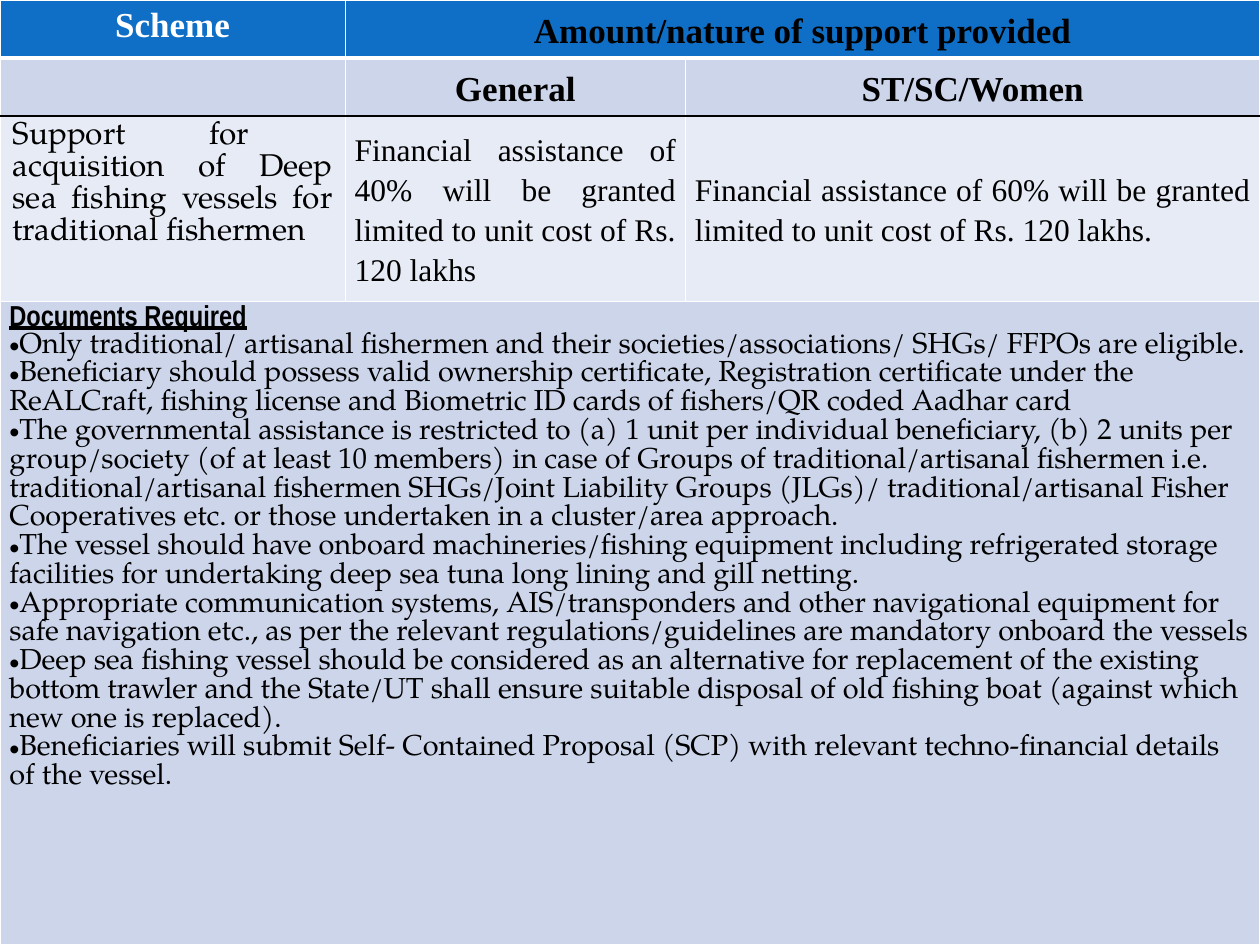
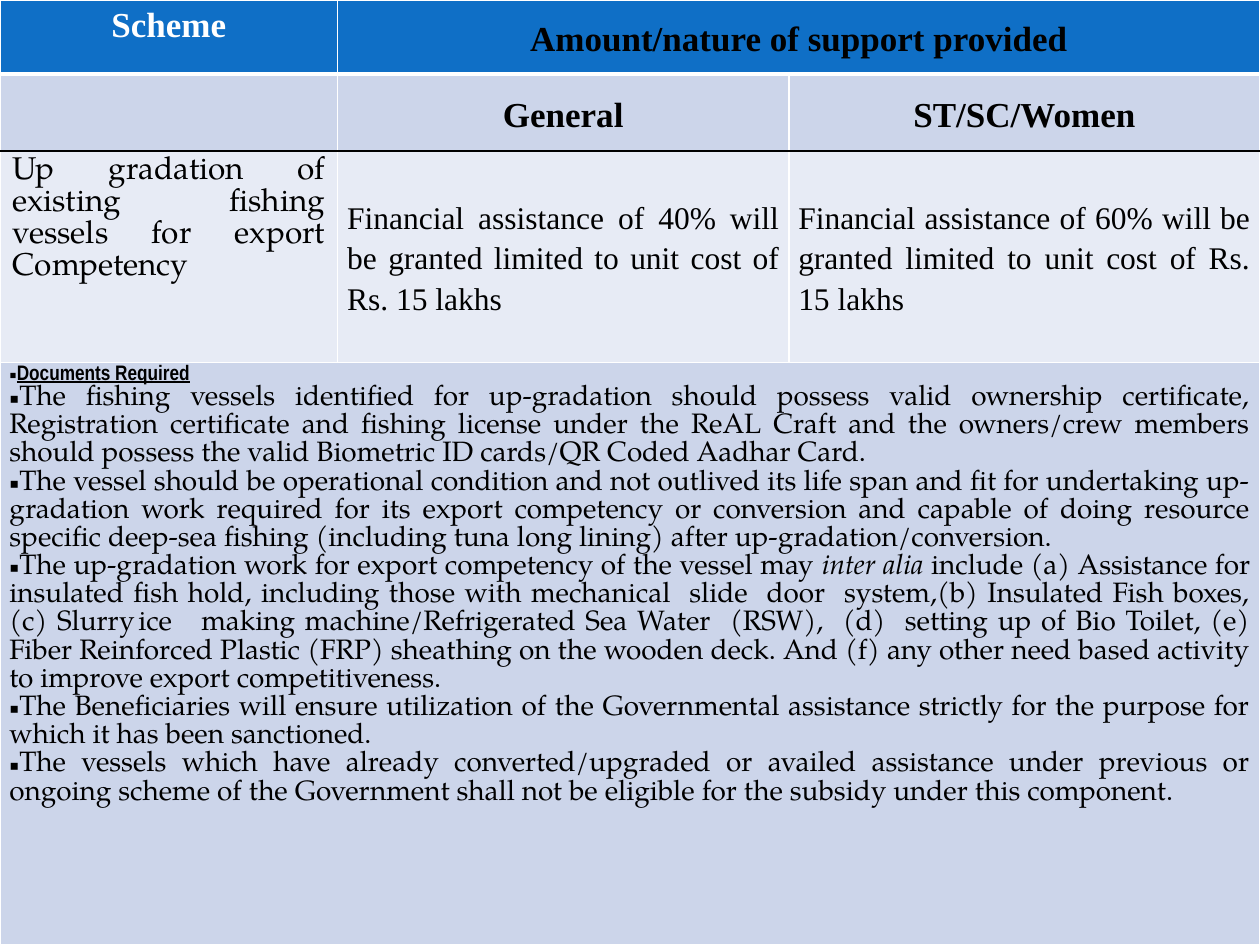
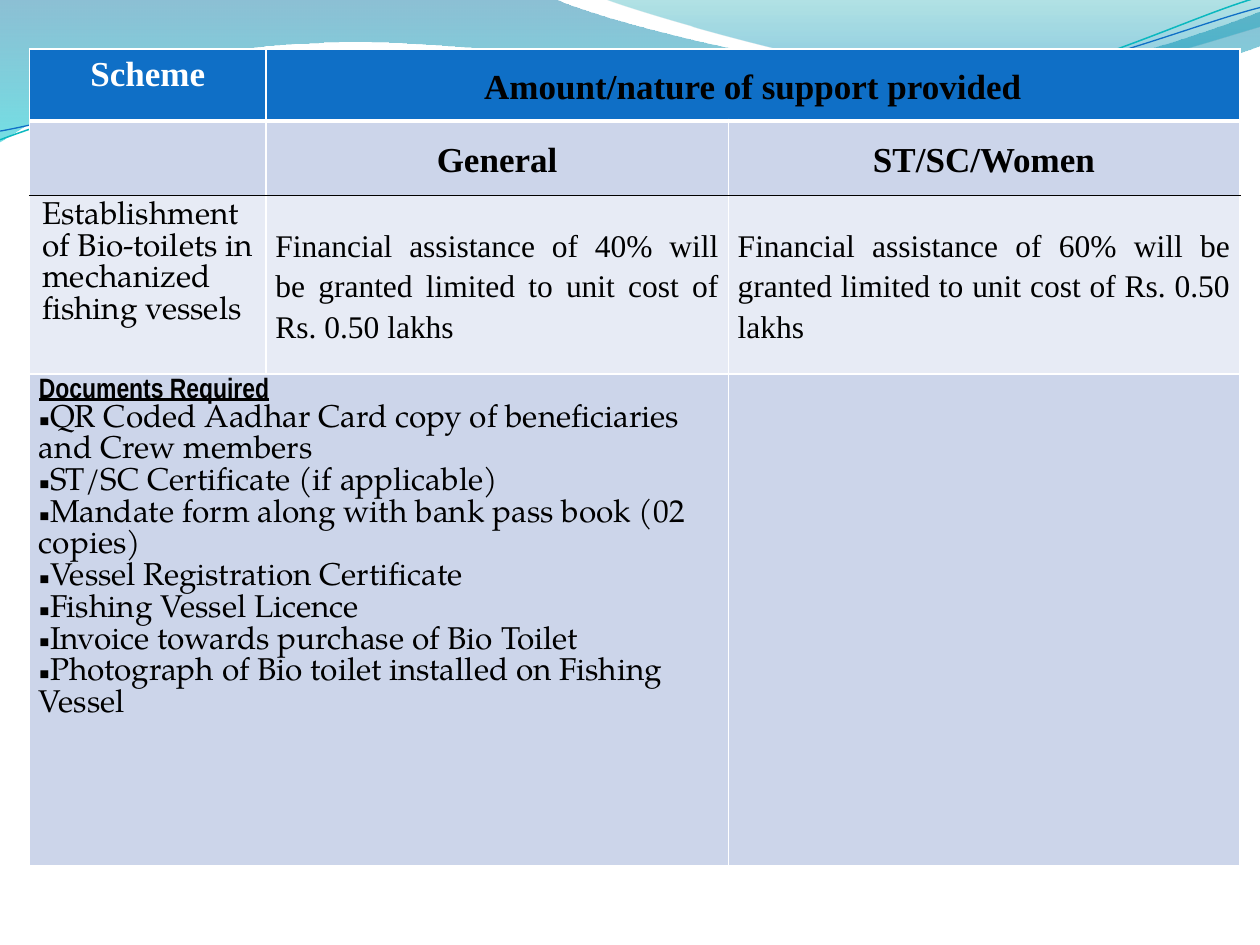
from lxml import etree
from pptx import Presentation
from pptx.dml.color import RGBColor
from pptx.enum import text
from pptx.oxml import ns
from pptx.util import Pt

WHITE = RGBColor(0xFF, 0xFF, 0xFF)
BLACK = RGBColor(0x00, 0x00, 0x00)
BLUE = RGBColor(0x0F, 0x6F, 0xC6)
TEAL = RGBColor(0x0A, 0xB8, 0xBF)
BAND_DARK = RGBColor(0xCC, 0xD5, 0xEA)
BAND_LIGHT = RGBColor(0xE7, 0xEB, 0xF5)
DEEP_BLUE = RGBColor(0x00, 0x74, 0xA1)
AQUA = RGBColor(0x00, 0xC6, 0xCF)
SEA_GREEN = RGBColor(0x00, 0xA1, 0xA9)
SKY_BLUE = RGBColor(0x00, 0x8B, 0xBF)
SERIF = "Times New Roman"
PALATINO = "TeX Gyre Pagella"
NARROW = "Arial Narrow"
CENTER, JUSTIFY, LEFT = text.PP_ALIGN.CENTER, text.PP_ALIGN.JUSTIFY, text.PP_ALIGN.LEFT

WAVES = [
    {"start": (0, 0), "stops": [(0, DEEP_BLUE, 45), (1, AQUA, 55)], "segments": [
        [(316.8, -0.7)],
        [(342.7, 12.2), (478.1, 45.4), (545.8, 45.4)],
        [(614.2, 45.4), (689.8, 18.7), (720, 6.5)],
        [(720.7, 25.9)],
        [(707.8, 31.7), (626.4, 54.7), (537.1, 54)],
        [(447.8, 54), (275, 20.2), (185, 24.5)],
        [(92.9, 25.9), (33.1, 59.8), (-0.7, 81.4)],
    ]},
    {"start": (344.9, -0.7), "stops": [(0, SEA_GREEN, 30), (0.8, SKY_BLUE, 45)], "segments": [
        [(366.5, 7.9), (491, 44.6), (553.7, 46.8)],
        [(616.3, 49.7), (691.9, 23), (720, 15.1)],
        [(720, 0)],
    ]},
    {"start": (0, 79.9), "line": (TEAL, 0.85), "segments": [
        [(34.6, 67), (113.8, 41), (199.4, 37.4)],
        [(284.4, 33.8), (427, 64.1), (513.4, 57.6)],
        [(599.8, 51.1), (675.4, 10.8), (718.6, -1.4)],
    ]},
    {"start": (0, 74.9), "line": (BLUE, 0.75), "segments": [
        [(33.8, 69.1), (118.1, 43.9), (203.8, 40.3)],
        [(290.2, 36.7), (429.8, 60.5), (516.2, 54)],
        [(601.9, 48.2), (677.5, 15.1), (720, 4.3)],
    ]},
]

SCHEMES = [
    {
        "at": (0, 0), "columns": [197.3, 194.4, 328.3], "rows": [33.1, 33.1, 106, 367.8],
        "scheme": "Support for  acquisition of Deep sea fishing vessels for traditional fishermen",
        "support": [
            "Financial assistance of 40% will be granted limited to unit cost of Rs. 120 lakhs ",
            "Financial assistance of 60% will be granted limited to unit cost of Rs. 120 lakhs.",
        ],
        "span": 3, "heading_size": 16.5, "heading_bullet": None,
        "size": 16.5, "bullet": "•", "align": LEFT,
        "documents": [
            "Only traditional/ artisanal fishermen and their societies/associations/ SHGs/ FFPOs are eligible.",
            "Beneficiary should possess valid ownership certificate, Registration certificate under the "
            "ReALCraft, fishing license and Biometric ID cards of fishers/QR coded Aadhar card",
            "The governmental assistance is restricted to (a) 1 unit per individual beneficiary, (b) 2 units per "
            "group/society (of at least 10 members) in case of Groups of traditional/artisanal fishermen i.e. "
            "traditional/artisanal fishermen SHGs/Joint Liability Groups (JLGs)/ traditional/artisanal Fisher "
            "Cooperatives etc. or those undertaken in a cluster/area approach.",
            "The vessel should have onboard machineries/fishing equipment including refrigerated storage "
            "facilities for undertaking deep sea tuna long lining and gill netting.",
            "Appropriate communication systems, AIS/transponders and other navigational equipment for "
            "safe navigation etc., as per the relevant regulations/guidelines are mandatory onboard the vessels",
            "Deep sea fishing vessel should be considered as an alternative for replacement of the existing "
            "bottom trawler and the State/UT shall ensure suitable disposal of old fishing boat (against which "
            "new one is replaced).",
            "Beneficiaries will submit Self- Contained Proposal (SCP) with relevant techno-financial details "
            "of the vessel.",
        ],
    },
    {
        "at": (0, 0), "columns": [193, 257.8, 269.2], "rows": [42.4, 43.8, 121, 332.8],
        "scheme": "Up gradation of existing fishing vessels for export Competency",
        "support": [
            "Financial assistance of 40% will be granted limited to unit cost of Rs. 15 lakhs ",
            "Financial assistance of 60% will be granted limited to unit cost of Rs. 15 lakhs",
        ],
        "span": 3, "heading_size": 12, "heading_bullet": "▪",
        "size": 16, "bullet": "▪", "align": JUSTIFY,
        "documents": [
            "The fishing vessels identified for up-gradation should possess valid ownership certificate, "
            "Registration certificate and fishing license under the ReAL Craft and the owners/crew members "
            "should possess the valid Biometric ID cards/QR Coded Aadhar Card.",
            "The vessel should be operational condition and not outlived its life span and fit for undertaking "
            "up-gradation work required for its export competency or conversion and capable of doing resource "
            "specific deep-sea fishing (including tuna long lining) after up-gradation/conversion.",
            "The up-gradation work for export competency of the vessel may _inter alia _include (a) Assistance for "
            "insulated fish hold, including those with mechanical  slide  door  system,(b) Insulated Fish boxes, "
            "(c) Slurry\tice\tmaking machine/Refrigerated Sea Water  (RSW),  (d)  setting up of Bio Toilet, "
            "(e) Fiber Reinforced Plastic (FRP) sheathing on the wooden deck. And (f) any other need based "
            "activity to improve export competitiveness.",
            "The Beneficiaries will ensure utilization of the Governmental assistance strictly for the purpose for "
            "which it has been sanctioned.",
            "The vessels which have already converted/upgraded or availed assistance under previous or "
            "ongoing scheme of the Government shall not be eligible for the subsidy under this component.",
        ],
    },
    {
        "at": (16.9, 28.1), "columns": [135.1, 264.2, 292.3], "rows": [41, 42.5, 102.2, 280.8],
        "scheme": "Establishment of Bio-toilets in mechanized fishing vessels",
        "support": [
            "Financial assistance of 40% will be granted limited to unit cost of Rs. 0.50 lakhs ",
            "Financial assistance of 60% will be granted limited to unit cost of Rs. 0.50 lakhs ",
        ],
        "span": 2, "heading_size": 16, "heading_bullet": None,
        "size": 18, "bullet": "▪", "align": LEFT,
        "documents": [
            "QR Coded Aadhar Card copy of beneficiaries and Crew members",
            "ST/SC Certificate (if applicable)",
            "Mandate form along with bank pass book (02 copies)",
            "Vessel Registration Certificate",
            "Fishing Vessel Licence",
            "Invoice towards purchase of Bio Toilet",
            "Photograph of Bio toilet installed on Fishing Vessel",
        ],
    },
]


def write(paragraph, content, font=SERIF, size=18, color=BLACK, bold=False, underline=False,
          align=JUSTIFY, spacing=None, bullet=None):
    if bullet:
        properties = paragraph._p.get_or_add_pPr()
        etree.SubElement(properties, ns.qn("a:buFont"), typeface="Arial")
        etree.SubElement(properties, ns.qn("a:buChar"), char=bullet)
    paragraph.alignment = align
    if spacing:
        paragraph.line_spacing = spacing
    for index, part in enumerate(content.split("_")):
        run = paragraph.add_run()
        run.text = part
        run.font.name = font
        run.font.size = Pt(size)
        run.font.color.rgb = color
        run.font.bold = bold
        run.font.underline = underline
        run.font.italic = index % 2 == 1


def style_cell(cell, fill, top, bottom):
    properties = cell._tc.get_or_add_tcPr()
    sides = {"lnL": (WHITE, 1), "lnR": (WHITE, 1), "lnT": top, "lnB": bottom}
    for side, (color, width) in sides.items():
        border = etree.SubElement(properties, ns.qn(f"a:{side}"), w=str(Pt(width)))
        solid = etree.SubElement(border, ns.qn("a:solidFill"))
        etree.SubElement(solid, ns.qn("a:srgbClr"), val=str(color))
    cell.fill.solid()
    cell.fill.fore_color.rgb = fill


presentation = Presentation()
presentation.slide_width = Pt(720)
presentation.slide_height = Pt(540)
blank = presentation.slide_layouts[6]
slides = [presentation.slides.add_slide(blank) for scheme in SCHEMES]

UNITS = 100
for number, wave in enumerate(WAVES, start=1):
    points = [wave["start"]] + [point for segment in wave["segments"] for point in segment]
    points = [(round(x * UNITS), round(y * UNITS)) for x, y in points]
    builder = slides[0].shapes.build_freeform(*points[0], scale=Pt(1) / UNITS)
    builder.add_line_segments(points[1:], close="stops" in wave)
    shape = builder.convert_to_shape()
    shape.shadow.inherit = False

    lines = iter(list(shape.element.iter(ns.qn("a:lnTo"))))
    for segment in wave["segments"]:
        first, *others = [next(lines) for point in segment]
        if others:
            first.tag = ns.qn("a:cubicBezTo")
            for other in others:
                first.append(other[0])
                other.getparent().remove(other)

    if "stops" in wave:
        shape.line.fill.background()
        shape.fill.gradient()
        shape.fill.gradient_angle = 270
        for stop, (position, color, opacity) in zip(shape.fill.gradient_stops, wave["stops"]):
            stop.position = position
            stop.color.rgb = color
        for tint, (position, color, opacity) in zip(shape.element.iter(ns.qn("a:srgbClr")), wave["stops"]):
            etree.SubElement(tint, ns.qn("a:alpha"), val=str(opacity * 1000))
    else:
        shape.fill.background()
        color, width = wave["line"]
        shape.line.color.rgb = color
        shape.line.width = Pt(width)
    shape.name = f"Wave {number}"
    shape.element.nvSpPr.cNvPr.set("id", str(20 + number))
    presentation.slide_master.shapes.element.append(shape.element)

THIN, THICK, RULE = (WHITE, 1), (WHITE, 3), (BLACK, 1)
ROW_STYLES = [
    (BLUE, THIN, THICK),
    (BAND_DARK, THICK, RULE),
    (BAND_LIGHT, RULE, THIN),
    (BAND_DARK, THIN, THIN),
]

for slide, scheme in zip(slides, SCHEMES):
    left, top = scheme["at"]
    columns, rows = scheme["columns"], scheme["rows"]
    frame = slide.shapes.add_table(len(rows), len(columns), Pt(left), Pt(top), Pt(sum(columns)), Pt(sum(rows)))
    table = frame.table
    table.horz_banding = False
    for column, width in zip(table.columns, columns):
        column.width = Pt(width)
    for row, height, row_style in zip(table.rows, rows, ROW_STYLES):
        row.height = Pt(height)
        for cell in row.cells:
            style_cell(cell, *row_style)
    table.cell(0, 1).merge(table.cell(0, 2))
    table.cell(3, 0).merge(table.cell(3, scheme["span"] - 1))

    write(table.cell(0, 0).text_frame.paragraphs[0], "Scheme", size=20, color=WHITE, bold=True, align=CENTER)
    write(table.cell(2, 0).text_frame.paragraphs[0], scheme["scheme"], font=PALATINO)

    heading = {"size": 20, "bold": True, "align": CENTER}
    entries = [
        (0, 1, "Amount/nature of support provided", heading),
        (1, 1, "General", heading),
        (1, 2, "ST/SC/Women", heading),
        (2, 1, scheme["support"][0], {}),
        (2, 2, scheme["support"][1], {}),
        (3, 0, "Documents Required", {
            "font": NARROW, "size": scheme["heading_size"], "bold": True, "underline": True,
            "bullet": scheme["heading_bullet"]}),
    ]
    for row_index, column_index, content, style in entries:
        cell = table.cell(row_index, column_index)
        cell.margin_left = cell.margin_right = Pt(5.4)
        cell.margin_top = cell.margin_bottom = Pt(0)
        if row_index < 3:
            cell.vertical_anchor = text.MSO_ANCHOR.MIDDLE
        write(cell.text_frame.paragraphs[0], content, spacing=1.15, **style)

    documents = table.cell(3, 0).text_frame
    for requirement in scheme["documents"]:
        write(documents.add_paragraph(), requirement, font=PALATINO, size=scheme["size"],
              align=scheme["align"], bullet=scheme["bullet"])

presentation.save("out.pptx")
